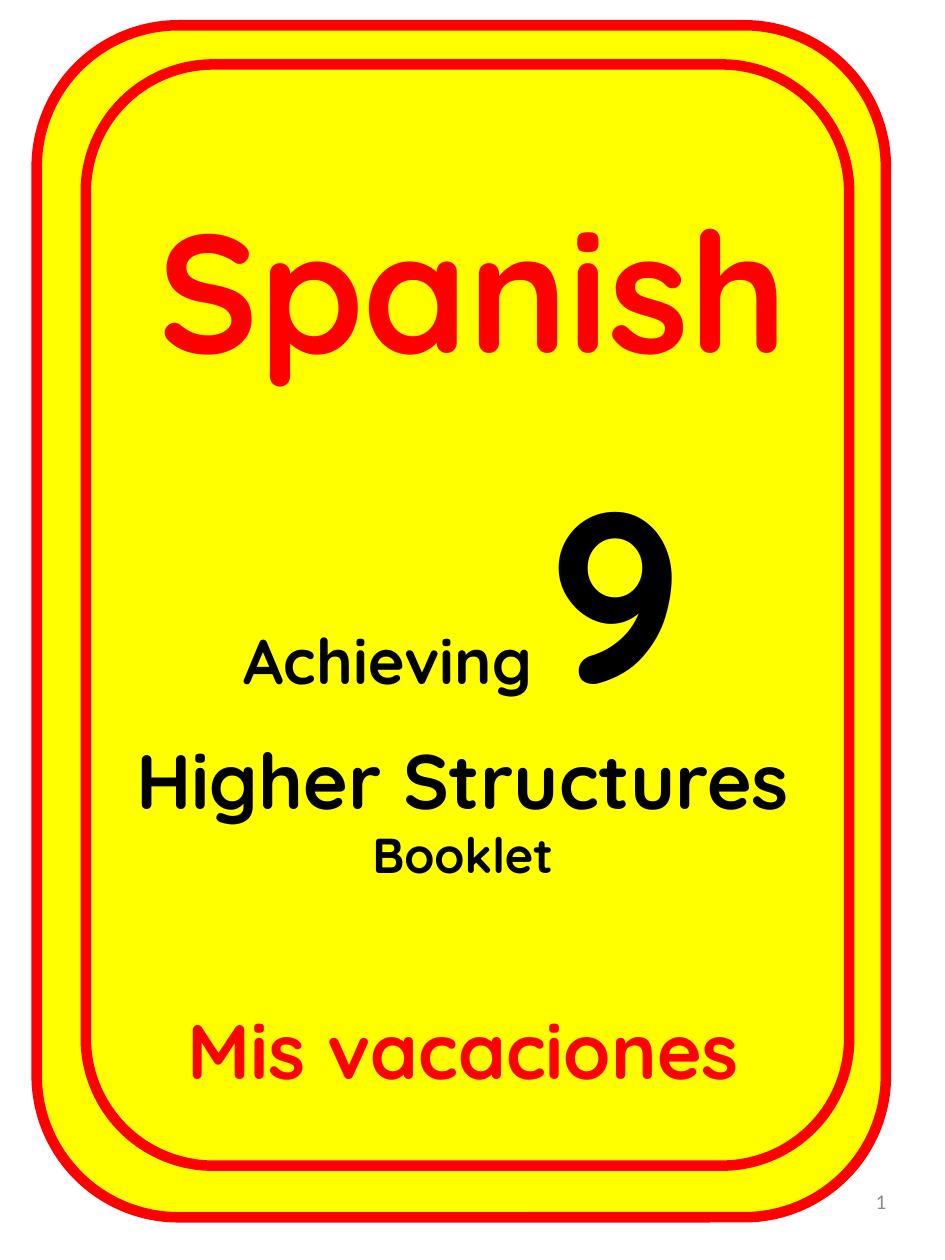
from dataclasses import dataclass

from pptx import Presentation
from pptx.dml.color import RGBColor
from pptx.enum.shapes import MSO_SHAPE
from pptx.enum.text import MSO_ANCHOR, MSO_AUTO_SIZE, PP_ALIGN
from pptx.util import Cm, Pt

ROUNDED = MSO_SHAPE.ROUNDED_RECTANGLE
TOP, MIDDLE = MSO_ANCHOR.TOP, MSO_ANCHOR.MIDDLE
LEFT, CENTER, RIGHT = PP_ALIGN.LEFT, PP_ALIGN.CENTER, PP_ALIGN.RIGHT
GROW, FIXED = MSO_AUTO_SIZE.SHAPE_TO_FIT_TEXT, MSO_AUTO_SIZE.NONE


@dataclass(frozen=True)
class Theme:
    red: RGBColor = RGBColor(0xFF, 0x00, 0x00)
    yellow: RGBColor = RGBColor(0xFF, 0xFF, 0x00)
    black: RGBColor = RGBColor(0x00, 0x00, 0x00)
    grey: RGBColor = RGBColor(0x8C, 0x8C, 0x8C)
    display_font: str = "Quicksand"
    number_font: str = "Calibri"
    subject: int = 96
    grade: int = 138
    heading: int = 44
    lead: int = 36
    small: int = 28
    page: int = 12
    border: int = 6


THEME = Theme()


@dataclass(frozen=True)
class Box:
    left: float
    top: float
    width: float
    height: float

    def lengths(self) -> tuple:
        return Cm(self.left), Cm(self.top), Cm(self.width), Cm(self.height)


@dataclass(frozen=True)
class Piece:
    text: str
    size: int
    color: RGBColor = THEME.black
    font: str = THEME.display_font
    bold: bool = True


@dataclass(frozen=True)
class Line:
    pieces: tuple
    align: PP_ALIGN = CENTER
    indent: float = 0


def add_frame(slide, box: Box, filled: bool) -> None:
    frame = slide.shapes.add_shape(ROUNDED, *box.lengths())
    frame.shadow.inherit = False
    frame.adjustments[0] = 0.167
    if filled:
        frame.fill.solid()
        frame.fill.fore_color.rgb = THEME.yellow
    else:
        frame.fill.background()
    frame.line.color.rgb = THEME.red
    frame.line.width = Pt(THEME.border)


def write_lines(holder, lines: list, anchor=MIDDLE, wrap=True, fit=GROW,
                bottom: float = 0.13) -> None:
    """Fill a text holder; bottom is its lower inset in cm."""
    frame = holder.text_frame
    frame.word_wrap = wrap
    frame.auto_size = fit
    frame.vertical_anchor = anchor
    frame.margin_bottom = Cm(bottom)
    for index, line in enumerate(lines):
        paragraph = frame.add_paragraph() if index else frame.paragraphs[0]
        paragraph.alignment = line.align
        if line.indent:
            properties = paragraph._p.get_or_add_pPr()
            properties.set("marL", "0")
            properties.set("indent", str(int(Cm(line.indent))))
        for piece in line.pieces:
            run = paragraph.add_run()
            run.text = piece.text
            run.font.size = Pt(piece.size)
            run.font.name = piece.font
            run.font.bold = piece.bold
            run.font.color.rgb = piece.color


def add_text(slide, box: Box, lines: list, **options) -> None:
    write_lines(slide.shapes.add_textbox(*box.lengths()), lines, **options)


def place_title(slide, box: Box, lines: list, **options) -> None:
    """Position the title placeholder in front of the frames."""
    title = slide.shapes.title
    title.left, title.top, title.width, title.height = box.lengths()
    write_lines(title, lines, **options)
    slide.shapes._spTree.append(title._element)


def main() -> None:
    presentation = Presentation()
    presentation.slide_width, presentation.slide_height = Cm(19.05), Cm(25.4)
    slide = presentation.slides.add_slide(presentation.slide_layouts[5])

    add_text(slide, Box(13.67, 23.55, 4.45, 1.35),
             [Line((Piece("1", THEME.page, THEME.grey, THEME.number_font, False),), RIGHT)],
             fit=FIXED)

    add_frame(slide, Box(0.74, 0.51, 17.12, 24.03), filled=True)
    add_frame(slide, Box(1.73, 1.3, 15.39, 22.2), filled=False)

    add_text(slide, Box(3.53, 20.09, 12.14, 2.13),
             [Line((Piece("Mis vacaciones", THEME.heading, THEME.red),), LEFT)],
             anchor=TOP, wrap=False)
    add_text(slide, Box(2.13, 8.76, 14.4, 10.01),
             [Line((Piece("Achieving ", THEME.lead), Piece("9", THEME.grade))),
              Line((Piece("Higher Structures", THEME.heading),)),
              Line((Piece("Booklet", THEME.small),), indent=-0.84)],
             bottom=0.92)
    place_title(slide, Box(2.34, 3.61, 14.4, 5.13),
                [Line((Piece("Spanish", THEME.subject, THEME.red),))], bottom=0.92)

    presentation.save("out.pptx")


if __name__ == "__main__":
    main()
